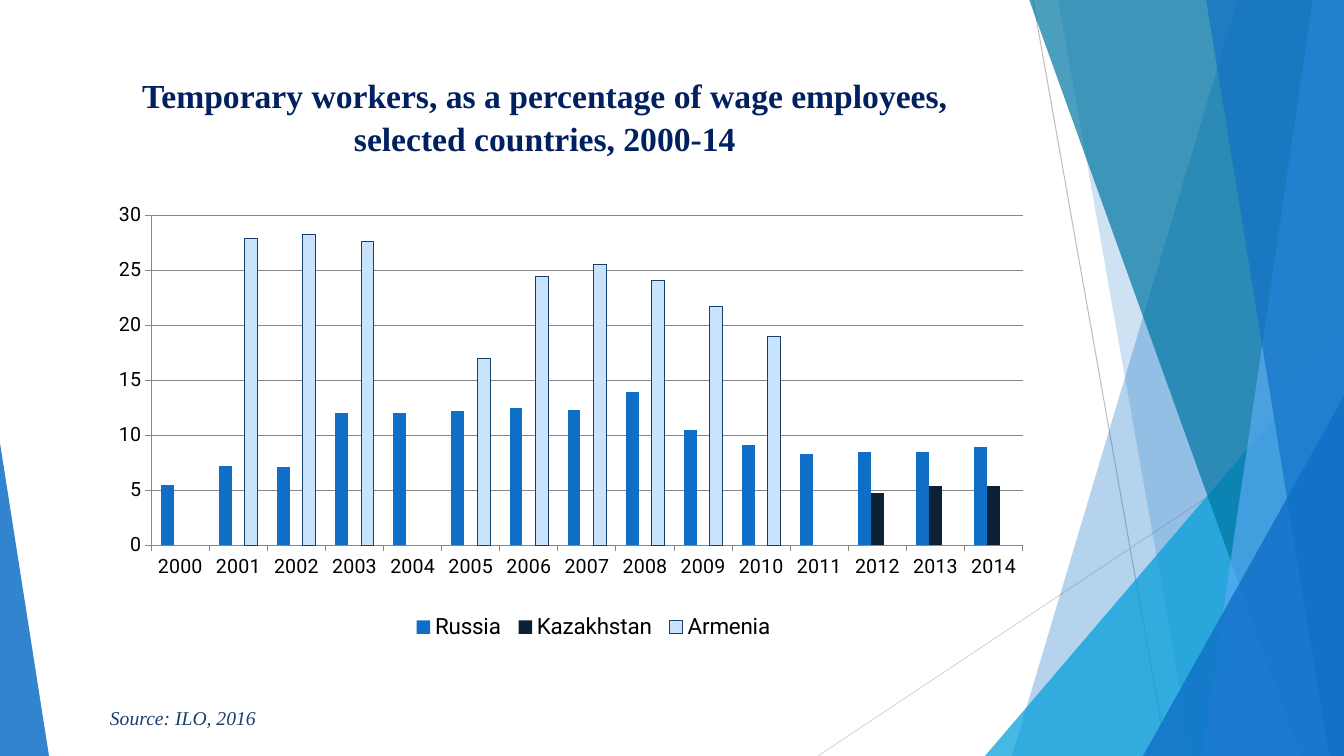
from lxml.etree import SubElement
from pptx import Presentation
from pptx.chart.data import CategoryChartData
from pptx.dml.color import RGBColor
from pptx.enum.chart import XL_CHART_TYPE, XL_LEGEND_POSITION, XL_TICK_MARK
from pptx.enum.shapes import MSO_CONNECTOR, MSO_SHAPE
from pptx.enum.text import MSO_ANCHOR, PP_ALIGN
from pptx.oxml.ns import qn
from pptx.util import Emu, Pt

SCALE = 914400 / 100.8
WIDTH, HEIGHT = 1344, 756

BLUE = RGBColor(0x0F, 0x6F, 0xC6)
CYAN = RGBColor(0x00, 0x9D, 0xD9)
TEAL = RGBColor(0x00, 0x76, 0xA3)
SKY = RGBColor(0x59, 0xAA, 0xF2)
PALE = RGBColor(0xC8, 0xE3, 0xFB)
NIGHT = RGBColor(0x0C, 0x20, 0x36)
NAVY = RGBColor(0x00, 0x20, 0x60)
SLATE = RGBColor(0x17, 0x40, 0x6D)
BLACK = RGBColor(0x00, 0x00, 0x00)
GRID_GREY = RGBColor(0x86, 0x86, 0x86)
MID_GREY = RGBColor(0xBF, 0xBF, 0xBF)
LIGHT_GREY = RGBColor(0xD9, 0xD9, 0xD9)


def px(*lengths):
    return [Emu(round(length * SCALE)) for length in lengths]


def set_layout(parent, **fractions):
    """Place a chart part by fractions of the chart frame."""
    old = parent.find(qn("c:layout"))
    if old is not None:
        parent.remove(old)
    layout = SubElement(parent, qn("c:layout"))
    manual = SubElement(layout, qn("c:manualLayout"))
    for name, value in fractions.items():
        SubElement(manual, qn(f"c:{name}")).set("val", str(value))
    return layout


deck = Presentation()
deck.slide_width, deck.slide_height = px(WIDTH, HEIGHT)
page = deck.slides.add_slide(deck.slide_layouts[6])

# Thin background lines
for ends, colour in [
    ((1033, 0, 1167, HEIGHT), MID_GREY),
    ((WIDTH, 406, 818, HEIGHT), LIGHT_GREY),
]:
    ray = page.shapes.add_connector(MSO_CONNECTOR.STRAIGHT, *px(*ends))
    ray.line.color.rgb = colour
    ray.line.width = Pt(0.75)
    SubElement(ray._element.spPr, qn("a:effectLst"))

# Facets: a sheet is (top x, bottom x) up to the right edge,
# a triangle is (left, top, width, height, apex)
facets = [
    ((1238, 1012), BLUE, 30),
    ((1058, 1192), BLUE, 20),
    ((985, 336, 359, 420, 1), CYAN, 72),
    ((1029, 1301), TEAL, 70),
    ((1313, 1202), SKY, 70),
    ((1206, 1329), BLUE, 65),
    ((1143, 396, 201, 360, 1), BLUE, 80),
    ((0, 443, 49, 313, 0), BLUE, 85),
]
for outline, colour, opacity in facets:
    if len(outline) == 2:
        top_x, bottom_x = outline
        builder = page.shapes.build_freeform(top_x, -1, scale=SCALE)
        builder.add_line_segments(
            [(WIDTH, -1), (WIDTH, HEIGHT), (bottom_x, HEIGHT)], close=True)
        facet = builder.convert_to_shape()
    else:
        *frame, apex = outline
        facet = page.shapes.add_shape(MSO_SHAPE.ISOSCELES_TRIANGLE, *px(*frame))
        facet.adjustments[0] = apex
    facet.shadow.inherit = False
    facet.line.fill.background()
    facet.fill.solid()
    facet.fill.fore_color.rgb = colour
    tint = facet._element.spPr.find(qn("a:solidFill"))[0]
    SubElement(tint, qn("a:alpha")).set("val", str(opacity * 1000))

# Title
box = page.shapes.add_textbox(*px(75, 68, 948, 145))
box.text_frame.word_wrap = True
box.text_frame.vertical_anchor = MSO_ANCHOR.TOP
para = box.text_frame.paragraphs[0]
para.alignment = PP_ALIGN.CENTER
para.line_spacing = 1.06
title_lines = [
    "Temporary workers, as a percentage of wage employees, ",
    "selected countries, 2000-14 ",
]
for number, line in enumerate(title_lines):
    if number:
        para.add_line_break()
    span = para.add_run()
    span.text = line
    span.font.name = "Times New Roman"
    span.font.size = Pt(24)
    span.font.bold = True
    span.font.color.rgb = NAVY

# Chart data
russia = [5.5, 7.2, 7.1, 12, 12, 12.2, 12.5, 12.3, 13.9, 10.5, 9.1, 8.3, 8.5, 8.5, 8.9]
kazakhstan = [None] * 12 + [4.7, 5.4, 5.4]
armenia = [None, 27.9, 28.2, 27.6, None, 17, 24.4, 25.5, 24.1, 21.7, 19] + [None] * 4
countries = [
    ("Russia", russia, BLUE),
    ("Kazakhstan", kazakhstan, NIGHT),
    ("Armenia", armenia, PALE),
]
data = CategoryChartData()
data.categories = [str(year) for year in range(2000, 2015)]
for name, values, colour in countries:
    data.add_series(name, values)

# Column chart
chart = page.shapes.add_chart(
    XL_CHART_TYPE.COLUMN_CLUSTERED, *px(98, 190, 935, 494), data).chart
chart.has_title = False
chart.font.name = "Roboto"
chart.font.size = Pt(10)
chart.font.color.rgb = BLACK
plot = chart.plots[0]
plot.gap_width = 150
plot.overlap = 0
plot.vary_by_categories = False
for series, (name, values, colour) in zip(plot.series, countries):
    series.format.fill.solid()
    series.format.fill.fore_color.rgb = colour
    series.format.line.fill.background()
armenia_line = plot.series[2].format.line
armenia_line.color.rgb = SLATE
armenia_line.width = Pt(0.75)

# Axes
for axis in (chart.category_axis, chart.value_axis):
    axis.major_tick_mark = XL_TICK_MARK.OUTSIDE
    axis.minor_tick_mark = XL_TICK_MARK.NONE
    axis.tick_labels.font.size = Pt(14)
    axis.format.line.color.rgb = GRID_GREY
    axis.format.line.width = Pt(0.75)
chart.value_axis.minimum_scale = 0
chart.value_axis.maximum_scale = 30
chart.value_axis.major_unit = 5
chart.value_axis.has_major_gridlines = True
grid_line = chart.value_axis.major_gridlines.format.line
grid_line.color.rgb = GRID_GREY
grid_line.width = Pt(0.75)

# Legend and plot area places
chart.has_legend = True
legend = chart.legend
legend.position = XL_LEGEND_POSITION.BOTTOM
legend.include_in_layout = False
legend.font.size = Pt(16)
legend_layout = set_layout(
    legend._element, xMode="edge", yMode="edge", x=0.33, y=0.85, w=0.4, h=0.07)
legend._element.find(qn("c:legendPos")).addnext(legend_layout)
plot_area = chart._chartSpace.chart.plotArea
plot_layout = set_layout(
    plot_area, layoutTarget="inner", xMode="edge", yMode="edge",
    x=0.057, y=0.051, w=0.932, h=0.668)
plot_area.insert(0, plot_layout)

# Source note
box = page.shapes.add_textbox(*px(100, 701, 362, 34))
box.text_frame.word_wrap = True
span = box.text_frame.paragraphs[0].add_run()
span.text = "Source: ILO, 2016"
span.font.name = "Times New Roman"
span.font.size = Pt(14)
span.font.italic = True
span.font.color.rgb = SLATE

deck.save("out.pptx")
